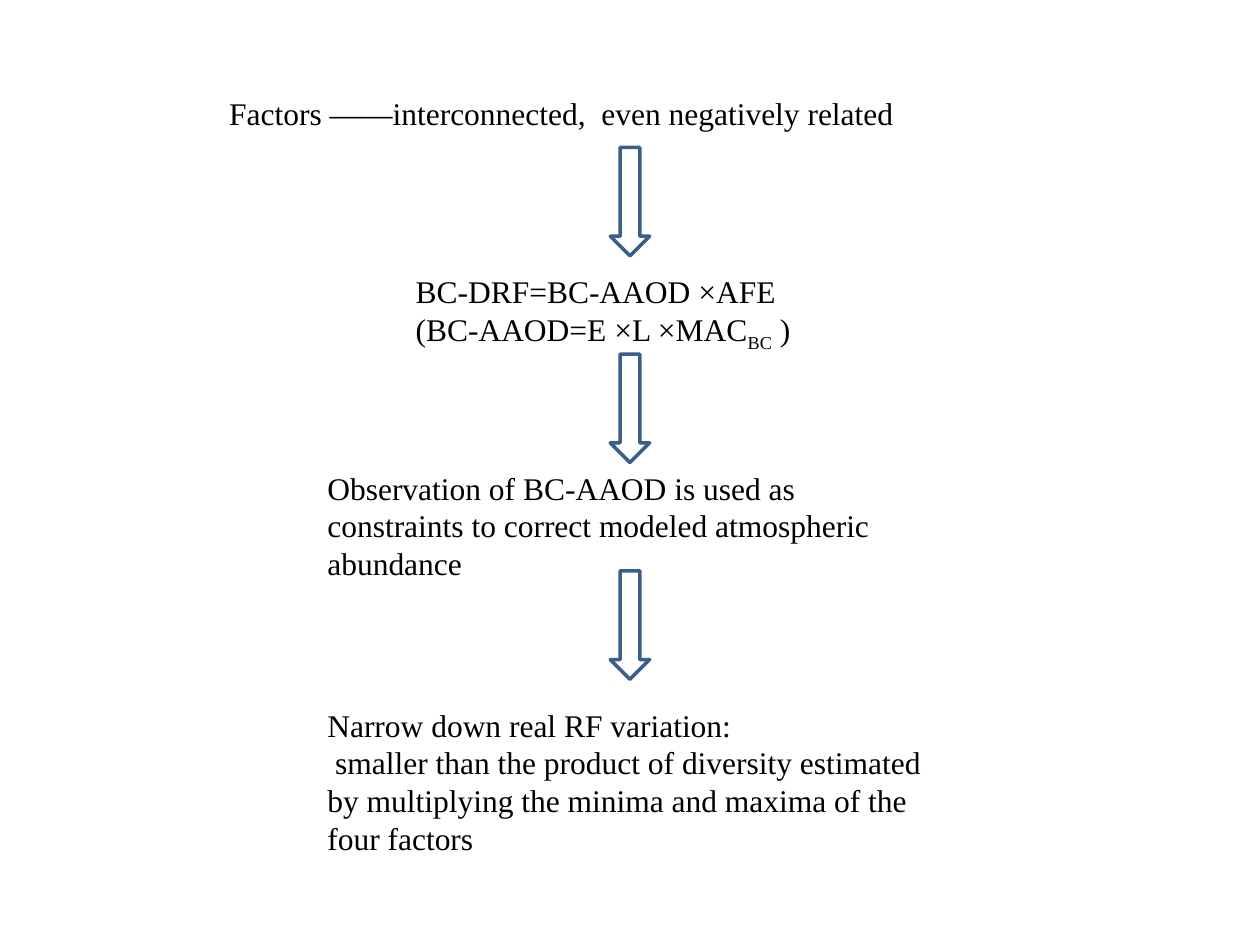
"""Build a slide showing how factors lead to a narrowed RF variation."""
from pptx import Presentation
from pptx.dml.color import RGBColor
from pptx.enum.shapes import MSO_SHAPE
from pptx.enum.text import MSO_AUTO_SIZE
from pptx.util import Pt

COLORS = {"text": "000000", "arrow": "3A5F8C"}
FONT_NAME = "Times New Roman"
FONT_SIZE = 18
SUBSCRIPT = "-25000"

STEPS = [
    {"box": (123.84, 50.4, 450, 29),
     "paragraphs": [[("Factors ——interconnected,  even negatively related", False)]]},
    {"box": (230.4, 151.92, 281.5, 72.7),
     "paragraphs": [[("BC-DRF=BC-AAOD ×AFE", False)],
                    [("(BC-AAOD=E ×L ×MAC", False), ("BC", True), (" )", False)]]},
    {"box": (180, 264.24, 360, 94.3),
     "paragraphs": [[("Observation of BC-AAOD is used as constraints to correct "
                      "modeled atmospheric abundance", False)]]},
    {"box": (180, 399.6, 371.5, 94.3),
     "paragraphs": [[("Narrow down real RF variation:", False)],
                    [(" smaller than the product of diversity estimated by multiplying "
                      "the minima and maxima of the four factors", False)]]},
]
ARROW_TOPS = [84.24, 202.32, 326.16]
ARROW_WIDTH, ARROW_HEIGHT = 22.5, 62
SLIDE_WIDTH, SLIDE_HEIGHT = 720, 540


def color(name):
    return RGBColor.from_string(COLORS[name])


def add_step(slide, box, paragraphs):
    text_frame = slide.shapes.add_textbox(*map(Pt, box)).text_frame
    text_frame.word_wrap = True
    text_frame.auto_size = MSO_AUTO_SIZE.NONE
    for index, pieces in enumerate(paragraphs):
        paragraph = text_frame.add_paragraph() if index else text_frame.paragraphs[0]
        for text, is_subscript in pieces:
            run = paragraph.add_run()
            run.text = text
            run.font.name = FONT_NAME
            run.font.size = Pt(FONT_SIZE)
            run.font.color.rgb = color("text")
            if is_subscript:
                run.font._element.set("baseline", SUBSCRIPT)


def add_arrow(slide, top):
    left = (SLIDE_WIDTH - ARROW_WIDTH) / 2
    arrow = slide.shapes.add_shape(
        MSO_SHAPE.DOWN_ARROW, Pt(left), Pt(top), Pt(ARROW_WIDTH), Pt(ARROW_HEIGHT))
    arrow.shadow.inherit = False
    arrow.fill.background()
    arrow.line.color.rgb = color("arrow")
    arrow.line.width = Pt(2)


def main():
    presentation = Presentation()
    presentation.slide_width = Pt(SLIDE_WIDTH)
    presentation.slide_height = Pt(SLIDE_HEIGHT)
    slide = presentation.slides.add_slide(presentation.slide_layouts[6])
    for step in STEPS:
        add_step(slide, **step)
    for top in ARROW_TOPS:
        add_arrow(slide, top)
    presentation.save("out.pptx")


if __name__ == "__main__":
    main()
